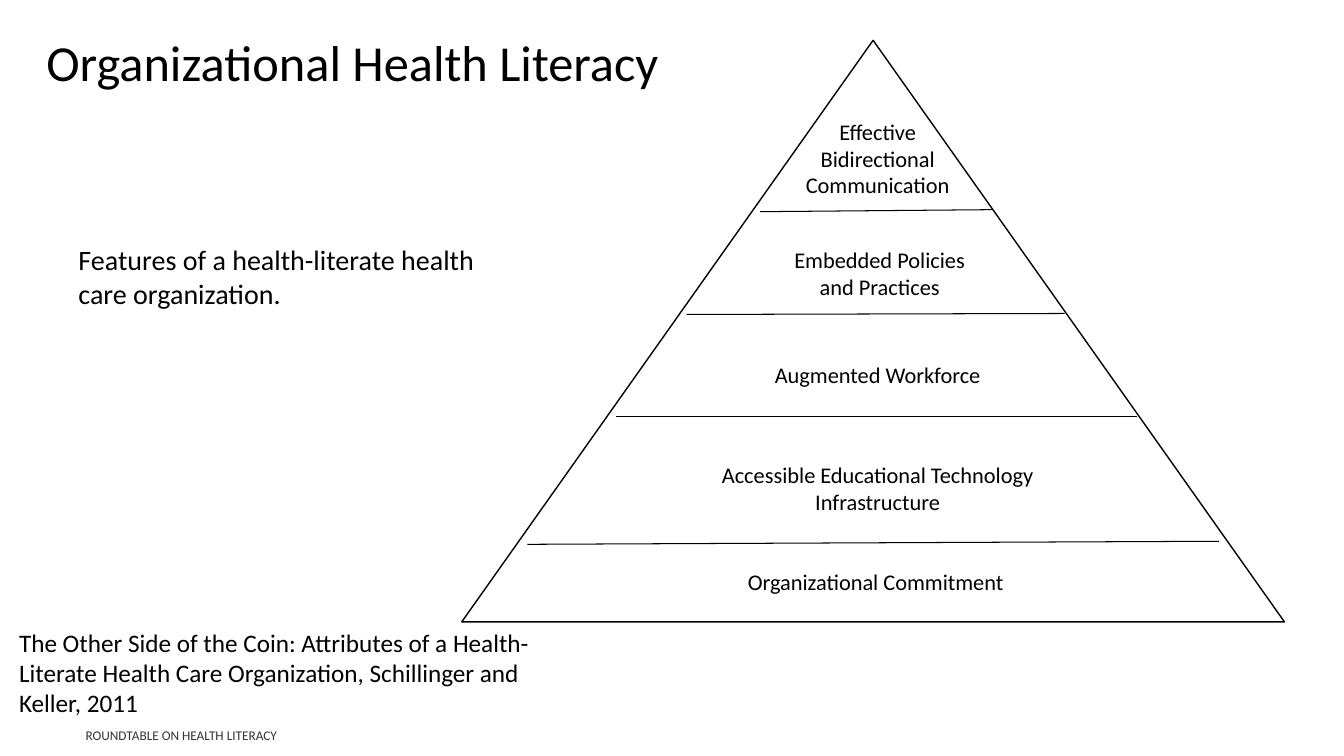
from lxml.etree import SubElement
from pptx import Presentation
from pptx.dml.color import RGBColor
from pptx.enum.shapes import MSO_CONNECTOR, MSO_SHAPE
from pptx.enum.text import MSO_ANCHOR as Anchor, MSO_AUTO_SIZE as AutoSize, PP_ALIGN as Align
from pptx.oxml.ns import qn
from pptx.util import Pt

PX = 9144
THEME = {
    "font": "Calibri",
    "ink": RGBColor(0x00, 0x00, 0x00),
    "muted": RGBColor(0x33, 0x33, 0x33),
    "paper": RGBColor(0xFF, 0xFF, 0xFF),
    "title": 36,
    "feature": 20,
    "citation": 18,
    "level": 16,
    "footer": 9.5,
}


def px(*lengths):
    return [length * PX for length in lengths]


def write(shape, text, role, align=Align.LEFT, anchor=Anchor.TOP, color="ink"):
    frame = shape.text_frame
    frame.text = text
    frame.word_wrap = True
    frame.auto_size = AutoSize.NONE
    frame.vertical_anchor = anchor
    paragraph = frame.paragraphs[0]
    paragraph.alignment = align
    font = paragraph.runs[0].font
    font.name = THEME["font"]
    font.size = Pt(THEME[role])
    font.color.rgb = THEME[color]


presentation = Presentation()
presentation.slide_width, presentation.slide_height = px(1333, 750)
slide = presentation.slides.add_slide(presentation.slide_layouts[5])
shapes = slide.shapes

pyramid = shapes.add_shape(MSO_SHAPE.ISOSCELES_TRIANGLE, *px(458, 40, 816, 577))
pyramid.shadow.inherit = False
pyramid.fill.solid()
pyramid.fill.fore_color.rgb = THEME["paper"]
pyramid.line.color.rgb = THEME["ink"]
pyramid.line.width = Pt(1)

levels = [
    ("Effective Bidirectional Communication", (780, 112, 181, 91)),
    ("Embedded Policies and Practices", (759, 239, 227, 64)),
    ("Augmented Workforce", (755, 353, 231, 37)),
    ("Accessible Educational Technology Infrastructure", (700, 453, 341, 64)),
    ("Organizational Commitment", (696, 559, 345, 37)),
]
for text, box in levels:
    write(shapes.add_textbox(*px(*box)), text, "level", Align.CENTER)

dividers = [
    (754, 210, 985, 208),
    (681, 312, 1056, 311),
    (611, 413, 1128, 413),
    (523, 540, 1209, 537),
]
for ends in dividers:
    divider = shapes.add_connector(MSO_CONNECTOR.STRAIGHT, *px(*ends))
    divider.line.color.rgb = THEME["ink"]
    divider.line.width = Pt(0.75)
    SubElement(divider._element.spPr, qn("a:effectLst"))

title = shapes.title
title.left, title.top, title.width, title.height = px(36, 26, 1071, 71)
write(title, "Organizational Health Literacy", "title")

feature = shapes.add_textbox(*px(68, 236, 460, 77))
write(feature, "Features of a health-literate health care organization.", "feature")

citation = shapes.add_textbox(*px(9, 617, 579, 101))
write(
    citation,
    "The Other Side of the Coin: Attributes of a Health-Literate Health Care Organization, "
    "Schillinger and Keller, 2011",
    "citation",
)

footer = shapes.add_textbox(*px(75, 717, 550, 25))
write(footer, "ROUNDTABLE ON HEALTH LITERACY", "footer", anchor=Anchor.MIDDLE, color="muted")

presentation.save("out.pptx")
